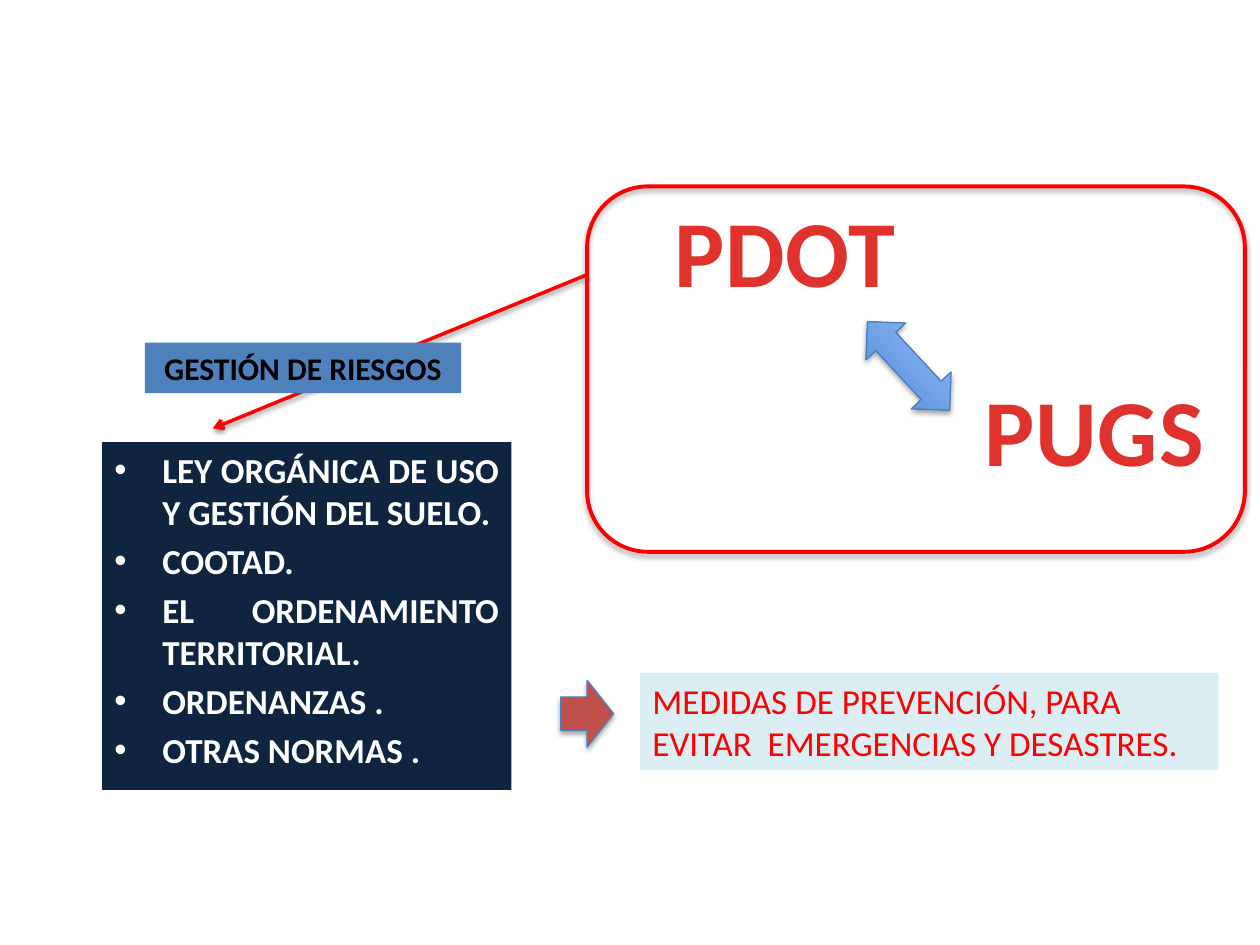
from lxml.etree import SubElement
from pptx import Presentation
from pptx.dml.color import RGBColor
from pptx.enum.shapes import MSO_CONNECTOR, MSO_SHAPE
from pptx.enum.text import MSO_ANCHOR, PP_ALIGN
from pptx.oxml.ns import qn
from pptx.util import Inches, Pt


class Theme:
    font = "Calibri"
    navy, blue, pale_blue = "0F243E", "4F81BD", "DBEEF4"
    red, brick, outline = "FF0000", "C0504D", "4B7EBC"
    white, black = "FFFFFF", "000000"
    title_gradient = ((0.25, "E0322D"), (1, "A2201C"))
    arrow_gradient = ((0, "3F80CE"), (1, "A4C4FF"))
    title_size, body_size, label_size = Pt(54), Pt(20), Pt(18)


NORMS = [
    "LEY ORGÁNICA DE USO Y GESTIÓN DEL SUELO.",
    "COOTAD.",
    "EL ORDENAMIENTO TERRITORIAL.",
    "ORDENANZAS .",
    "OTRAS NORMAS .",
]


def apply(target, values):
    for name, value in values.items():
        setattr(target, name, value)


def paint(fill, color, angle=0):
    """Fill with a plain colour, a pair of gradient stops, or nothing."""
    if color is None:
        fill.background()
    elif isinstance(color, str):
        fill.solid()
        fill.fore_color.rgb = RGBColor.from_string(color)
    else:
        fill.gradient()
        fill.gradient_angle = angle
        for stop, (position, value) in zip(fill.gradient_stops, color):
            stop.position = position
            stop.color.rgb = RGBColor.from_string(value)


def add_shadow(shape, alpha, distance):
    properties = shape._element.spPr
    for old in properties.findall(qn("a:effectLst")):
        properties.remove(old)
    effects = SubElement(properties, qn("a:effectLst"))
    shadow = SubElement(effects, qn("a:outerShdw"), blurRad=str(Pt(3.1)),
                        dist=str(Pt(distance)), dir="5400000", rotWithShape="0")
    color = SubElement(shadow, qn("a:srgbClr"), val=Theme.black)
    SubElement(color, qn("a:alpha"), val=str(alpha * 1000))


def add_bullet(paragraph):
    properties = paragraph._p.get_or_add_pPr()
    properties.set("marL", str(Inches(0.38)))
    properties.set("indent", str(-Inches(0.38)))
    SubElement(properties, qn("a:buFont"), typeface="Arial")
    SubElement(properties, qn("a:buChar"), char="•")


def write(shape, lines, color, size, bold=False, align=PP_ALIGN.LEFT,
          bullets=False, wrap=True):
    frame = shape.text_frame
    apply(frame, {"word_wrap": wrap, "vertical_anchor": MSO_ANCHOR.TOP})
    for index, line in enumerate(lines):
        paragraph = frame.paragraphs[0] if index == 0 else frame.add_paragraph()
        paragraph.alignment = align
        if index:
            paragraph.space_before = Pt(4)
        if bullets:
            add_bullet(paragraph)
        run = paragraph.add_run()
        run.text = line
        apply(run.font, {"name": Theme.font, "size": size, "bold": bold})
        paint(run.font.fill, color, angle=270)


def add_figure(slide, kind, box, fill=None, line=None, width=0.75, shadow=False):
    shape = slide.shapes.add_shape(kind, *map(Inches, box))
    shape.shadow.inherit = False
    paint(shape.fill, fill, angle=90)
    paint(shape.line.fill, line)
    if line:
        shape.line.width = Pt(width)
    if shadow:
        add_shadow(shape, alpha=35, distance=1.8)
    return shape


def add_title(slide, text, box):
    shape = slide.shapes.add_textbox(*map(Inches, box))
    write(shape, [text], Theme.title_gradient, Theme.title_size, bold=True,
          align=PP_ALIGN.CENTER, wrap=False)
    run = shape.text_frame.paragraphs[0].runs[0]
    run.font._element.set("spc", "50")


def add_arrow_line(slide, start, end):
    connector = slide.shapes.add_connector(
        MSO_CONNECTOR.STRAIGHT, *map(Inches, start + end))
    paint(connector.line.fill, Theme.red)
    connector.line.width = Pt(2)
    SubElement(connector.line._get_or_add_ln(), qn("a:tailEnd"), type="arrow")
    add_shadow(connector, alpha=38, distance=1.6)


def main():
    presentation = Presentation()
    apply(presentation, {"slide_width": Inches(10), "slide_height": Inches(7.5)})
    slide = presentation.slides.add_slide(presentation.slide_layouts[6])

    # Legal norms and the measures they lead to
    norms = add_figure(slide, MSO_SHAPE.RECTANGLE, (0.81, 3.51, 3.25, 2.76), Theme.navy)
    write(norms, NORMS, Theme.white, Theme.body_size, bold=True,
          align=PP_ALIGN.JUSTIFY, bullets=True)
    measures = add_figure(slide, MSO_SHAPE.RECTANGLE, (5.08, 5.34, 4.59, 0.77),
                          Theme.pale_blue)
    write(measures, ["MEDIDAS DE PREVENCIÓN, PARA EVITAR  EMERGENCIAS Y DESASTRES."],
          Theme.red, Theme.body_size)
    add_figure(slide, MSO_SHAPE.RIGHT_ARROW, (4.45, 5.4, 0.42, 0.53),
               Theme.brick, Theme.outline, shadow=True)

    # The two linked plans in their frame
    add_title(slide, "PDOT", (5.24, 1.48, 1.98, 1.01))
    add_title(slide, "PUGS", (7.7, 2.9, 1.97, 1.01))
    add_arrow_line(slide, (4.66, 2.18), (1.69, 3.4))
    link = add_figure(slide, MSO_SHAPE.LEFT_RIGHT_ARROW, (6.73, 2.69, 0.96, 0.43),
                      Theme.arrow_gradient, Theme.outline, shadow=True)
    link.rotation = 47.2
    add_figure(slide, MSO_SHAPE.ROUNDED_RECTANGLE, (4.66, 1.48, 5.22, 2.9),
               line=Theme.red, width=2.25, shadow=True)

    # Label over the arrow to the norms
    label = add_figure(slide, MSO_SHAPE.RECTANGLE, (1.15, 2.72, 2.51, 0.4), Theme.blue)
    write(label, ["GESTIÓN DE RIESGOS"], Theme.black, Theme.label_size, bold=True,
          align=PP_ALIGN.CENTER)

    presentation.save("out.pptx")


if __name__ == "__main__":
    main()
